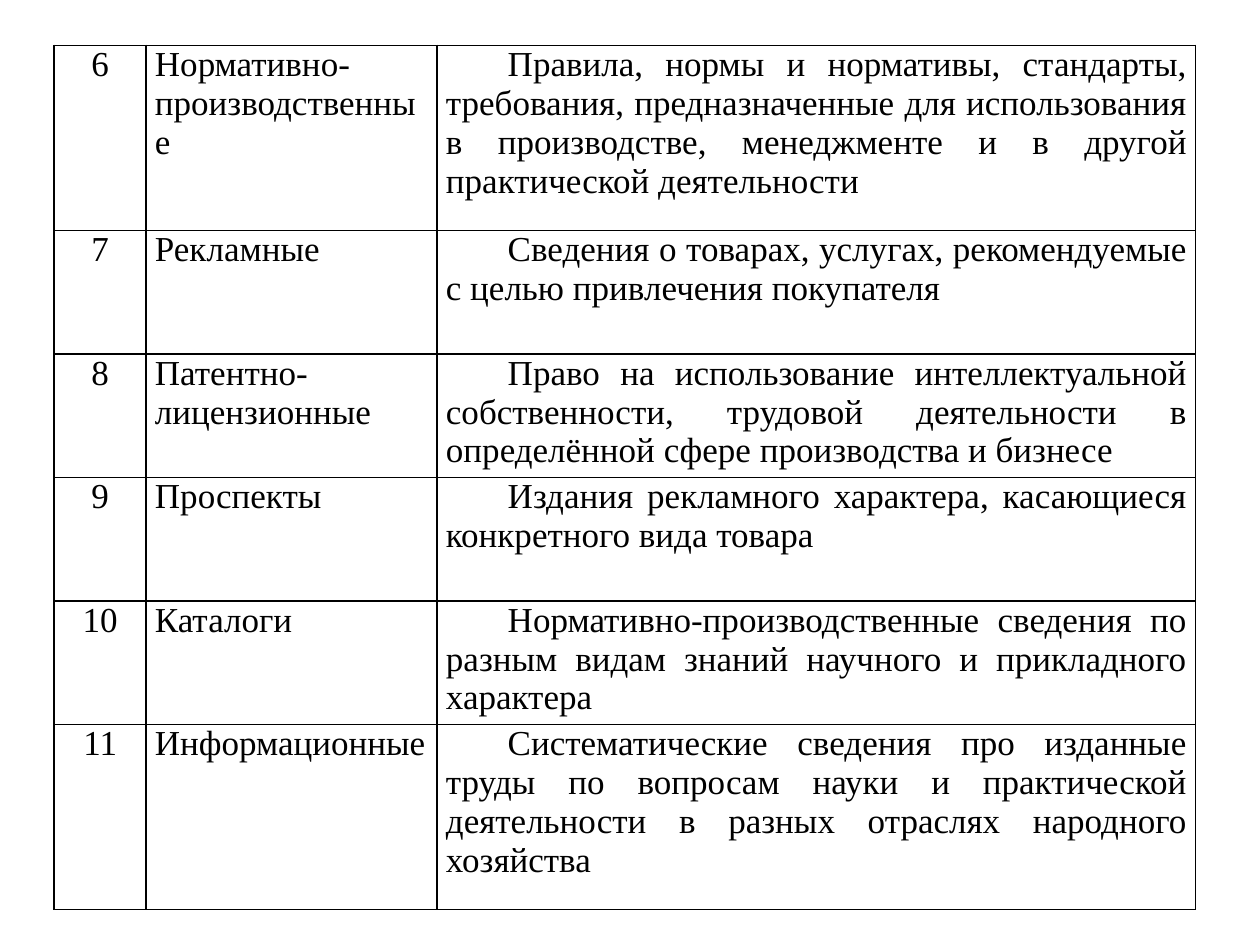
from dataclasses import dataclass

from lxml.etree import SubElement
from pptx import Presentation
from pptx.dml.color import RGBColor
from pptx.enum.text import MSO_ANCHOR, PP_ALIGN
from pptx.oxml.ns import qn
from pptx.util import Inches, Pt


@dataclass(frozen=True)
class Theme:
    """Colours, type and line sizes of the slide."""
    ink: str = "000000"
    paper: str = "FFFFFF"
    font: str = "Times New Roman"
    text_size: int = 20
    border_width: int = 1


THEME = Theme()
COLUMN_WIDTHS = (0.73, 2.31, 6.02)
COLUMN_ALIGNMENTS = (PP_ALIGN.CENTER, PP_ALIGN.JUSTIFY, PP_ALIGN.JUSTIFY)
COLUMN_INDENTS = (0, 0, 0.49)
ROW_UNIT = 0.49
FIRST_NUMBER = 6
DOCUMENT_TYPES = (
    ("Нормативно-производственные",
     "Правила, нормы и нормативы, стандарты, требования, предназначенные для "
     "использования в производстве, менеджменте и в другой практической деятельности", 3),
    ("Рекламные",
     "Сведения о товарах, услугах, рекомендуемые с целью привлечения покупателя", 2),
    ("Патентно-лицензионные",
     "Право на использование интеллектуальной собственности, трудовой деятельности "
     "в определённой сфере производства и бизнесе", 2),
    ("Проспекты",
     "Издания рекламного характера, касающиеся конкретного вида товара", 2),
    ("Каталоги",
     "Нормативно-производственные сведения по разным видам знаний научного "
     "и прикладного характера", 2),
    ("Информационные",
     "Систематические сведения про изданные труды по вопросам науки и практической "
     "деятельности в разных отраслях народного хозяйства", 3),
)


def apply_format(target, values):
    """Set each named attribute on the target."""
    for name, value in values.items():
        setattr(target, name, value)


def draw_borders(cell):
    """Rule all four sides of a cell."""
    properties = cell._tc.get_or_add_tcPr()
    for position, side in enumerate(("a:lnL", "a:lnR", "a:lnT", "a:lnB")):
        border = SubElement(properties, qn(side), w=str(Pt(THEME.border_width)))
        fill = SubElement(border, qn("a:solidFill"))
        SubElement(fill, qn("a:srgbClr"), val=THEME.ink)
        properties.insert(position, border)


def fill_cell(cell, text, alignment, indent):
    """Write and format one table cell."""
    apply_format(cell, {
        "text": text,
        "margin_left": Inches(0.07),
        "margin_right": Inches(0.07),
        "margin_top": 0,
        "margin_bottom": 0,
        "vertical_anchor": MSO_ANCHOR.TOP,
    })
    cell.fill.solid()
    cell.fill.fore_color.rgb = RGBColor.from_string(THEME.paper)
    draw_borders(cell)
    paragraph = cell.text_frame.paragraphs[0]
    paragraph.alignment = alignment
    if indent:
        properties = paragraph._p.get_or_add_pPr()
        properties.set("marL", "0")
        properties.set("indent", str(Inches(indent)))
    font = paragraph.runs[0].font
    apply_format(font, {"name": THEME.font, "size": Pt(THEME.text_size), "bold": False})
    font.color.rgb = RGBColor.from_string(THEME.ink)


def add_document_types(slide, left, top, width, height):
    """Place the numbered table of document types in the given box."""
    table = slide.shapes.add_table(
        len(DOCUMENT_TYPES), len(COLUMN_WIDTHS), left, top, width, height).table
    apply_format(table, {"first_row": False, "horz_banding": False})
    for column, share in zip(table.columns, COLUMN_WIDTHS):
        column.width = int(width * share / sum(COLUMN_WIDTHS))
    total_units = sum(units for _, _, units in DOCUMENT_TYPES)
    for number, (row, (kind, content, units)) in enumerate(
            zip(table.rows, DOCUMENT_TYPES), FIRST_NUMBER):
        row.height = int(height * units / total_units)
        for cell, text, alignment, indent in zip(
                row.cells, (str(number), kind, content), COLUMN_ALIGNMENTS, COLUMN_INDENTS):
            fill_cell(cell, text, alignment, indent)


def main():
    """Build and save the slide."""
    presentation = Presentation()
    apply_format(presentation, {"slide_width": Inches(10), "slide_height": Inches(7.5)})
    slide = presentation.slides.add_slide(presentation.slide_layouts[6])
    table_height = ROW_UNIT * sum(units for _, _, units in DOCUMENT_TYPES)
    add_document_types(slide, Inches(0.43), Inches(0.36),
                       Inches(sum(COLUMN_WIDTHS)), Inches(table_height))
    presentation.save("out.pptx")


if __name__ == "__main__":
    main()
